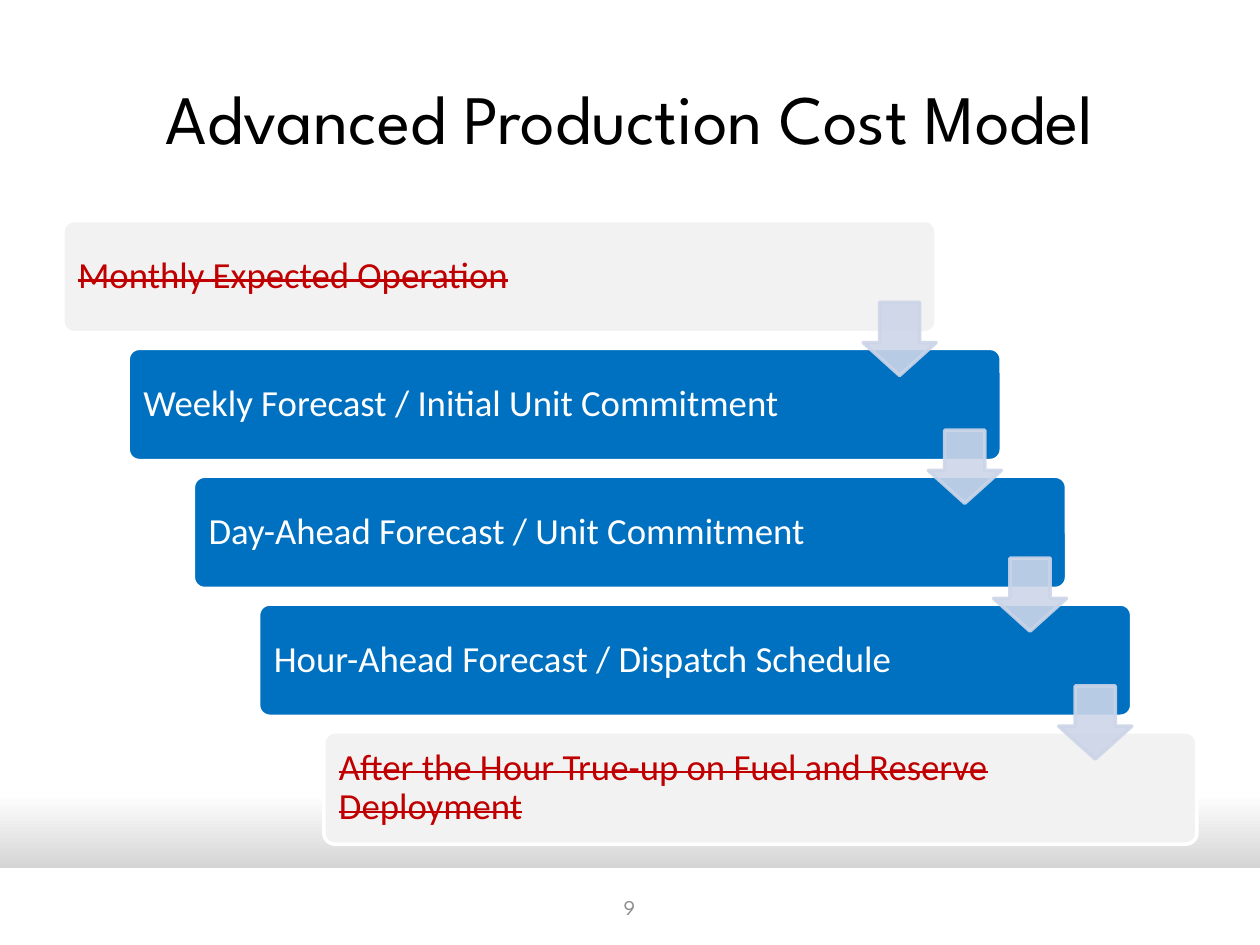
from dataclasses import dataclass

from lxml import etree
from pptx import Presentation, util as u
from pptx.dml.color import RGBColor
from pptx.enum import shapes, text
from pptx.oxml import ns

# Content: step label, and whether it is struck out
TITLE = "Advanced Production Cost Model"
PAGE = "9"
STEPS = [
    ("Monthly Expected Operation", True),
    ("Weekly Forecast / Initial Unit Commitment", False),
    ("Day-Ahead Forecast / Unit Commitment", False),
    ("Hour-Ahead Forecast / Dispatch Schedule", False),
    ("After the Hour True-up on Fuel and Reserve Deployment", True),
]


@dataclass(frozen=True)
class Theme:
    head: str = "League Spartan"
    body: str = "Calibri"
    title: float = 39.6
    step: float = 21
    page: float = 12
    black: str = "000000"
    white: str = "FFFFFF"
    blue: str = "0070C0"
    pale: str = "F2F2F2"
    red: str = "C00000"
    arrow: str = "CCD5E8"
    gray: str = "8C8C8C"
    shade: str = "A6A6A6"


T = Theme()

# Staircase grid, in inches
WIDE, HIGH = 10, 7.5
LEFT, TOP, SPAN, DEEP = 0.5, 1.75, 9, 4.95
BAR_W, BAR_H = SPAN * 0.77, DEEP * 0.18
STEP_X = (SPAN - BAR_W) / (len(STEPS) - 1)
STEP_Y = (DEEP - BAR_H) / (len(STEPS) - 1)
PAD = 0.03
ARROW = 0.58
ARROW_Y = 0.65  # arrow top below its bar's top


def rgb(code):
    return RGBColor.from_string(code)


def box(*nums):
    return [u.Inches(n) for n in nums]


def fade(fill, share):
    color = fill._xPr.find(".//" + ns.qn("a:srgbClr"))
    etree.SubElement(color, ns.qn("a:alpha"), val=str(share * 1000))


def draw(slide, kind, area, fill, line=None, adj=(), alpha=None):
    shape = slide.shapes.add_shape(kind, *box(*area))
    shape.shadow.inherit = False
    for i, val in enumerate(adj):
        shape.adjustments[i] = val
    shape.fill.solid()
    shape.fill.fore_color.rgb = rgb(fill)
    if line:
        shape.line.width = u.Pt(2)
        shape.line.color.rgb = rgb(line)
    else:
        shape.line.fill.background()
    if alpha:
        fade(shape.fill, alpha)
        fade(shape.line.fill, alpha)
    return shape


def write(shape, words, font, size, color, align, struck=False):
    frame = shape.text_frame
    frame.word_wrap = True
    frame.auto_size = text.MSO_AUTO_SIZE.NONE
    frame.vertical_anchor = text.MSO_ANCHOR.MIDDLE
    para = frame.paragraphs[0]
    para.alignment = align
    run = para.add_run()
    run.text = words
    run.font.name = font
    run.font.size = u.Pt(size)
    run.font.color.rgb = rgb(color)
    if struck:
        run._r.get_or_add_rPr().set("strike", "sngStrike")
    return frame


def backdrop(slide):
    fill = slide.background.fill
    fill.gradient()
    fill.gradient_angle = 270
    for stop, color, place in zip(
        fill.gradient_stops, (T.white, T.shade), (0.84, 1)
    ):
        stop.color.rgb = rgb(color)
        stop.position = place
    draw(slide, shapes.MSO_SHAPE.RECTANGLE, (0, 6.89, WIDE, HIGH - 6.89), T.white)


def steps(slide):
    spots = [(LEFT + i * STEP_X, TOP + i * STEP_Y) for i in range(len(STEPS))]

    # Bars and labels
    for i, ((x, y), (words, struck)) in enumerate(zip(spots, STEPS)):
        fill, ink = (T.pale, T.red) if struck else (T.blue, T.white)
        draw(slide, shapes.MSO_SHAPE.ROUNDED_RECTANGLE,
             (x, y, BAR_W, BAR_H), fill, T.white, (0.1,))
        width = 5.78 if i else 5.86
        label = slide.shapes.add_textbox(
            *box(x + PAD, y + PAD, width, BAR_H - 2 * PAD))
        frame = write(label, words, T.body, T.step, ink,
                      text.PP_ALIGN.LEFT, struck)
        frame.margin_left = frame.margin_right = u.Inches(0.09)
        frame.margin_top = frame.margin_bottom = u.Inches(0.09)
        frame.paragraphs[0].line_spacing = 0.9

    # Arrows from each bar to the next
    for x, y in spots[:-1]:
        draw(slide, shapes.MSO_SHAPE.DOWN_ARROW,
             (x + BAR_W - ARROW, y + ARROW_Y, ARROW, ARROW),
             T.arrow, T.arrow, (0.55, 0.45), 90)


def main():
    deck = Presentation()
    deck.slide_width, deck.slide_height = box(WIDE, HIGH)
    slide = deck.slides.add_slide(deck.slide_layouts[5])
    backdrop(slide)

    # Title
    title = slide.shapes.title
    title.left, title.top, title.width, title.height = box(LEFT, 0.3, SPAN, 1.25)
    write(title, TITLE, T.head, T.title, T.black, text.PP_ALIGN.CENTER)

    steps(slide)

    # Page number
    foot = slide.shapes.add_textbox(*box(3.83, 7, 2.33, 0.4))
    write(foot, PAGE, T.head, T.page, T.gray, text.PP_ALIGN.CENTER)
    deck.save("out.pptx")


if __name__ == "__main__":
    main()
